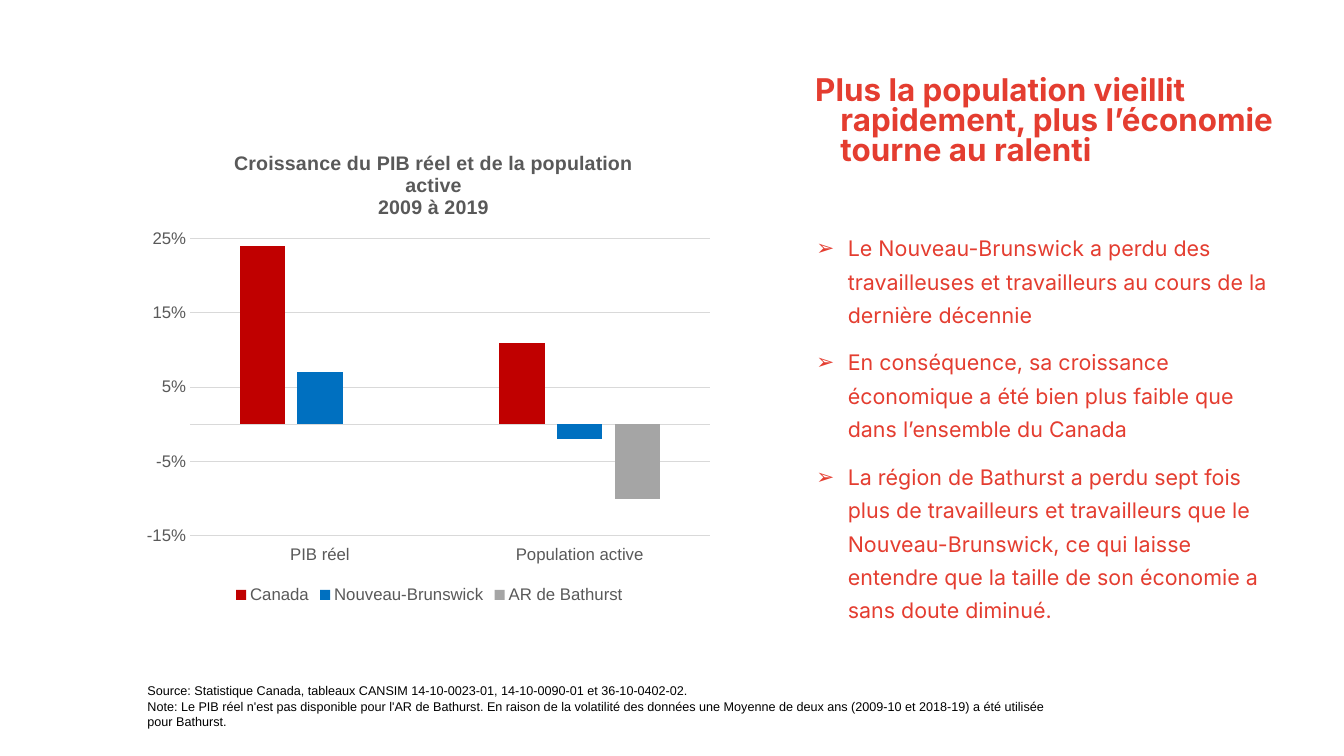
from dataclasses import dataclass

from lxml.etree import SubElement
from pptx import Presentation
from pptx.chart.data import CategoryChartData
from pptx.dml.color import RGBColor
from pptx.enum.chart import (
    XL_CHART_TYPE as ChartType,
    XL_LEGEND_POSITION as LegendPosition,
    XL_TICK_LABEL_POSITION as LabelPosition,
    XL_TICK_MARK as TickMark,
)
from pptx.oxml import parse_xml
from pptx.oxml.ns import nsdecls, qn
from pptx.util import Emu, Pt

PX = 9525


@dataclass(frozen=True)
class Theme:
    red: str = "E43D30"
    black: str = "000000"
    gray: str = "595959"
    grid: str = "D9D9D9"
    body_font: str = "Inter"
    data_font: str = "Arial"
    heading: float = 22.4
    bullet: float = 15.3
    note: float = 9
    chart_title: float = 14
    chart_label: float = 12


THEME = Theme()

HEADING = "Plus la population vieillit rapidement, plus l’économie tourne au ralenti"
BULLETS = [
    "Le Nouveau-Brunswick a perdu des travailleuses et travailleurs au cours de la dernière décennie",
    "En conséquence, sa croissance économique a été bien plus faible que dans l’ensemble du Canada",
    "La région de Bathurst a perdu sept fois plus de travailleurs et travailleurs que le "
    "Nouveau-Brunswick, ce qui laisse entendre que la taille de son économie a sans doute diminué.",
]
NOTES = [
    "Source: Statistique Canada, tableaux CANSIM 14-10-0023-01, 14-10-0090-01 et 36-10-0402-02.",
    "Note: Le PIB réel n'est pas disponible pour l'AR de Bathurst. En raison de la volatilité des "
    "données une Moyenne de deux ans (2009-10 et 2018-19) a été utilisée pour Bathurst.",
]
CHART_TITLE = "Croissance du PIB réel et de la population active\n2009 à 2019"
CATEGORIES = ["PIB réel", "Population active"]
SERIES = [
    ("Canada", [0.24, 0.11], "C00000"),
    ("Nouveau-Brunswick", [0.07, -0.02], "0070C0"),
    ("AR de Bathurst", [None, -0.1], "A5A5A5"),
]


def px(*lengths):
    return [Emu(length * PX) for length in lengths]


def apply(target, values):
    for name, value in values.items():
        setattr(target, name, value)


def style_font(font, name, size, color, bold=False):
    apply(font, {"name": name, "size": Pt(size), "bold": bold})
    font.color.rgb = RGBColor.from_string(color)


def style_line(line, color):
    line.color.rgb = RGBColor.from_string(color)
    line.width = Pt(0.75)


def add_bullet(para, color):
    properties = para._p.get_or_add_pPr()
    bullet_color = SubElement(properties, qn("a:buClr"))
    SubElement(bullet_color, qn("a:srgbClr"), val=color)
    SubElement(properties, qn("a:buFont"), typeface=THEME.data_font)
    SubElement(properties, qn("a:buChar"), char="➢")


def add_text(page, place, texts, font, spacing=1.0, before=0, indent=(0, 0), bullets=False):
    """Add a text box; indent is the left margin and the first-line offset in px."""
    box = page.shapes.add_textbox(*px(*place))
    frame = box.text_frame
    frame.word_wrap = True
    for index, text in enumerate(texts):
        para = frame.paragraphs[0] if index == 0 else frame.add_paragraph()
        para.line_spacing = spacing
        para.space_before = Pt(before if index else 0)
        margin, offset = px(*indent)
        properties = para._p.get_or_add_pPr()
        properties.set("marL", str(margin))
        properties.set("indent", str(offset))
        if bullets:
            add_bullet(para, THEME.red)
        span = para.add_run()
        span.text = text
        style_font(span.font, **font)


def set_layout(parent, index, target="", **fractions):
    """Place a chart part by fractions of the chart's size."""
    for old in parent.findall(qn("c:layout")):
        parent.remove(old)
    layout = parse_xml(f"<c:layout {nsdecls('c')}><c:manualLayout/></c:layout>")
    manual = layout[0]
    if target:
        SubElement(manual, qn("c:layoutTarget"), val=target)
    for axis in "xy":
        SubElement(manual, qn(f"c:{axis}Mode"), val="edge")
    for name, value in fractions.items():
        SubElement(manual, qn(f"c:{name}"), val=str(value))
    parent.insert(index, layout)


def style_axes(chart, label_font):
    category, value = chart.category_axis, chart.value_axis
    for axis in (category, value):
        apply(axis, {"major_tick_mark": TickMark.NONE, "minor_tick_mark": TickMark.NONE})
        style_font(axis.tick_labels.font, **label_font)
    category.tick_label_position = LabelPosition.LOW
    style_line(category.format.line, THEME.grid)
    apply(value, {"minimum_scale": -0.15, "maximum_scale": 0.25, "major_unit": 0.1,
                  "has_major_gridlines": True})
    apply(value.tick_labels, {"number_format": "0%", "number_format_is_linked": False})
    value.format.line.fill.background()
    style_line(value.major_gridlines.format.line, THEME.grid)


def add_growth_chart(page, place):
    data = CategoryChartData(number_format="0%")
    data.categories = CATEGORIES
    for name, values, _ in SERIES:
        data.add_series(name, values)
    chart = page.shapes.add_chart(ChartType.COLUMN_CLUSTERED, *px(*place), data).chart
    label_font = {"name": THEME.data_font, "size": THEME.chart_label, "color": THEME.gray}
    style_font(chart.font, **label_font)

    chart.has_title = True
    title = chart.chart_title
    title.include_in_layout = False
    title.text_frame.text = CHART_TITLE
    title_font = {**label_font, "size": THEME.chart_title, "bold": True}
    for para in title.text_frame.paragraphs:
        for span in para.runs:
            style_font(span.font, **title_font)

    chart.has_legend = True
    apply(chart.legend, {"position": LegendPosition.BOTTOM, "include_in_layout": False})
    style_font(chart.legend.font, **label_font)

    style_axes(chart, label_font)
    plot = chart.plots[0]
    apply(plot, {"gap_width": 219, "overlap": -27, "vary_by_categories": False})
    for series, (_, _, color) in zip(plot.series, SERIES):
        series.invert_if_negative = False
        series.format.fill.solid()
        series.format.fill.fore_color.rgb = RGBColor.from_string(color)

    root = chart.element
    set_layout(root.find(".//" + qn("c:plotArea")), 0, "inner", x=0.09, y=0.23, w=0.89, h=0.62)
    set_layout(root.find(".//" + qn("c:title")), 1, x=0.16, y=0.04)


def main():
    deck = Presentation()
    deck.slide_width, deck.slide_height = px(1280, 720)
    page = deck.slides.add_slide(deck.slide_layouts[6])

    red_text = {"name": THEME.body_font, "color": THEME.red}
    add_text(page, (743, 69, 489, 125), [HEADING],
             {**red_text, "size": THEME.heading, "bold": True},
             spacing=0.8, indent=(48, -24))
    add_text(page, (744, 212, 489, 416), BULLETS, {**red_text, "size": THEME.bullet},
             spacing=1.3, before=10, indent=(54, -30), bullets=True)
    add_text(page, (131, 646, 899, 54), NOTES,
             {"name": THEME.data_font, "size": THEME.note, "color": THEME.black})
    add_growth_chart(page, (131, 122, 556, 457))
    deck.save("out.pptx")


if __name__ == "__main__":
    main()
